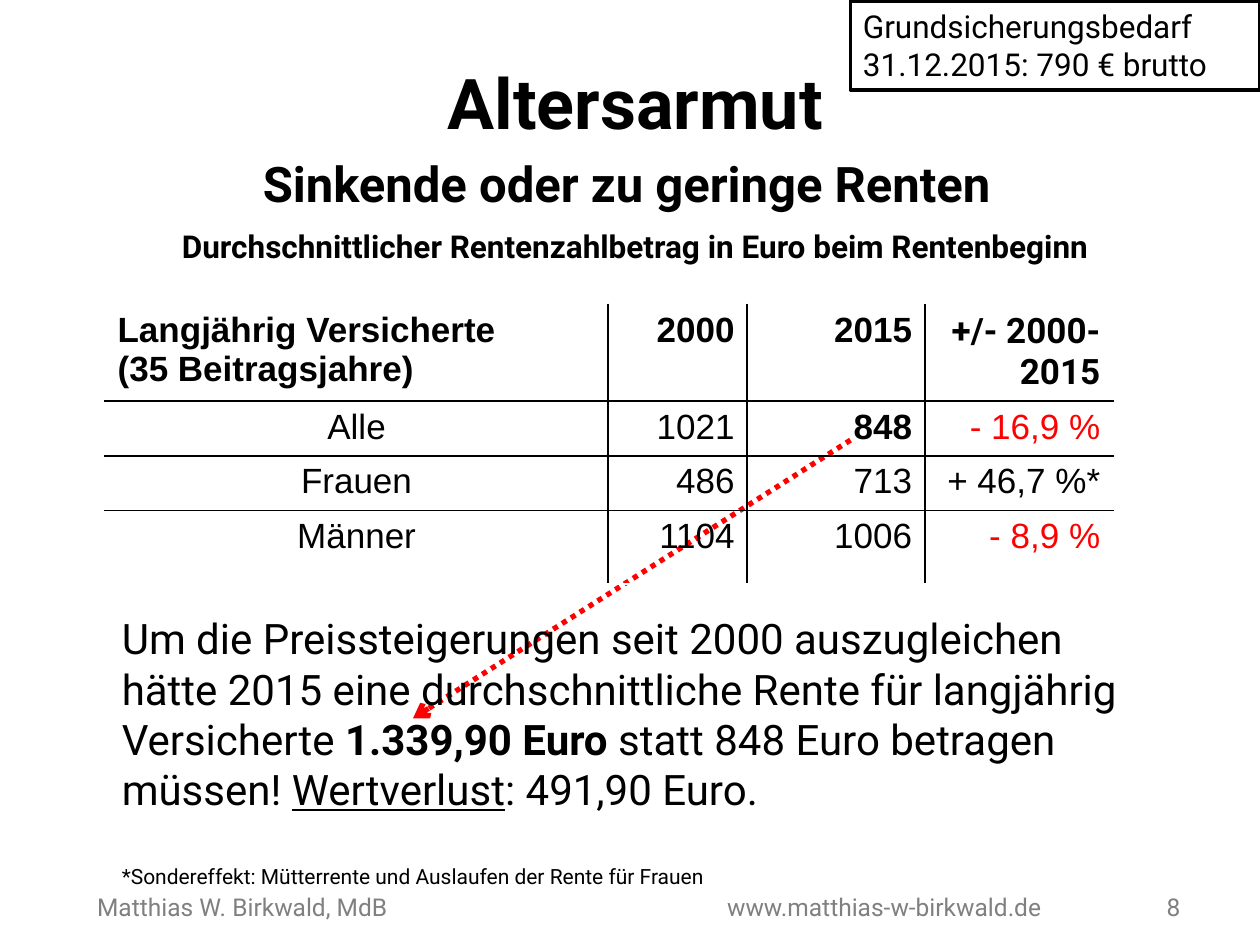
from pptx import Presentation
from pptx import util as u
from pptx.dml.color import RGBColor
from pptx.enum import dml, shapes, text
from pptx.oxml import parse_xml
from pptx.oxml.ns import nsdecls

Pt = u.Pt
BLACK = RGBColor(0, 0, 0)
WHITE = RGBColor(255, 255, 255)
RED = RGBColor(255, 0, 0)
GREY = RGBColor(128, 128, 128)
LEFT, CENTER, RIGHT = text.PP_ALIGN.LEFT, text.PP_ALIGN.CENTER, text.PP_ALIGN.RIGHT

HEADINGS = [
    ("Altersarmut", (54, 46, 618, 51), 40, 0),
    ("Sinkende oder zu geringe Renten ", (55.5, 84, 612, 41), 28, 3.6),
    ("Durchschnittlicher Rentenzahlbetrag in Euro beim Rentenbeginn", (36, 126, 654, 29), 18, 3.6),
]
NEED = "Grundsicherungsbedarf 31.12.2015: 790 € brutto"
PENSIONS = [
    ("Langjährig Versicherte \v(35 Beitragsjahre)", "2000", "2015", "+/- 2000-2015"),
    ("Alle", "1021", "848", "- 16,9 %"),
    ("Frauen", "486", "713", "+ 46,7 %*"),
    ("Männer", "1104", "1006", "- 8,9 %"),
]
COLUMN_WIDTHS = (287.5, 79.5, 101.5, 107.5)
ROW_HEIGHTS = (52, 30.5, 30.5, 42)
CONCLUSION = [
    ("Um die Preissteigerungen seit 2000 auszugleichen hätte 2015 eine "
     "durchschnittliche Rente für langjährig Versicherte ", {}),
    ("1.339,90 Euro ", {"bold": True}),
    ("statt 848 Euro betragen müssen! ", {}),
    ("Wertverlust", {"underline": True}),
    (": 491,90 Euro.", {}),
]
FOOTNOTE = "*Sondereffekt: Mütterrente und Auslaufen der Rente für Frauen"
FOOTERS = [
    ("Matthias W. Birkwald, MdB\twww.matthias-w-birkwald.de", (55.5, 499.5, 593, 37.5), LEFT),
    ("8", (507, 499.5, 167.5, 37.5), RIGHT),
]


def format_run(run, size, color=BLACK, name="Roboto", **extra):
    run.font.color.rgb = color
    for key, value in {"size": Pt(size), "name": name, **extra}.items():
        setattr(run.font, key, value)


def add_text(paragraph, words, size, **extra):
    run = paragraph.add_run()
    run.text = words
    format_run(run, size, **extra)


def text_frame(slide, box, margin_x=7.2, margin_y=3.6, anchor=text.MSO_ANCHOR.TOP):
    frame = slide.shapes.add_textbox(*map(Pt, box)).text_frame
    layout = {"word_wrap": True, "vertical_anchor": anchor,
              "margin_left": Pt(margin_x), "margin_right": Pt(margin_x),
              "margin_top": Pt(margin_y), "margin_bottom": Pt(margin_y)}
    for key, value in layout.items():
        setattr(frame, key, value)
    return frame


def add_arrow(slide):
    arrow = slide.shapes.add_connector(
        shapes.MSO_CONNECTOR.STRAIGHT, Pt(486), Pt(251.5), Pt(236), Pt(410.5))
    arrow.line.color.rgb = RED
    arrow.line.width = Pt(3)
    arrow.line.dash_style = dml.MSO_LINE.ROUND_DOT
    arrow.line._get_or_add_ln().append(parse_xml(f'<a:tailEnd type="arrow" {nsdecls("a")}/>'))
    arrow._element.spPr.append(parse_xml(f'<a:effectLst {nsdecls("a")}/>'))


def set_borders(cell, row, column):
    outer = {"L": column == 0, "R": column == len(COLUMN_WIDTHS) - 1,
             "T": row == 0, "B": row == len(PENSIONS) - 1}
    properties = cell._tc.get_or_add_tcPr()
    for position, (side, is_outer) in enumerate(outer.items()):
        color = WHITE if is_outer else BLACK
        properties.insert(position, parse_xml(
            f'<a:ln{side} w="12700" {nsdecls("a")}><a:solidFill>'
            f'<a:srgbClr val="{color}"/></a:solidFill></a:ln{side}>'))


def add_pensions(slide):
    table = slide.shapes.add_table(
        len(PENSIONS), len(COLUMN_WIDTHS), Pt(60), Pt(174),
        Pt(sum(COLUMN_WIDTHS)), Pt(sum(ROW_HEIGHTS))).table
    table.first_row = table.horz_banding = False
    for column, width in zip(table.columns, COLUMN_WIDTHS):
        column.width = Pt(width)
    for row, height in zip(table.rows, ROW_HEIGHTS):
        row.height = Pt(height)
    for r, values in enumerate(PENSIONS):
        for c, value in enumerate(values):
            cell = table.cell(r, c)
            cell.fill.background()
            set_borders(cell, r, c)
            paragraph = cell.text_frame.paragraphs[0]
            paragraph.text = value
            paragraph.alignment = RIGHT if c else CENTER if r else LEFT
            for run in paragraph.runs:
                format_run(run, 20, RED if value.startswith("- ") else BLACK,
                           "Roboto" if (r, c) == (0, 3) else "Arial",
                           bold=r == 0 or value == "848")


def add_need(slide):
    need = slide.shapes.add_shape(
        shapes.MSO_SHAPE.RECTANGLE, Pt(486), Pt(0.5), Pt(234), Pt(51))
    need.shadow.inherit = False
    need.fill.solid()
    need.fill.fore_color.rgb = WHITE
    need.line.color.rgb = BLACK
    need.line.width = Pt(2)
    need.text_frame.vertical_anchor = text.MSO_ANCHOR.TOP
    paragraph = need.text_frame.paragraphs[0]
    paragraph.alignment = LEFT
    add_text(paragraph, NEED, 18)


def add_conclusion(slide):
    frame = text_frame(slide, (62.5, 346.5, 600, 167))
    for words, extra in CONCLUSION:
        add_text(frame.paragraphs[0], words, 24, **extra)
    footnote = frame.add_paragraph()
    footnote.space_before = Pt(28)
    add_text(footnote, FOOTNOTE, 12)


def main():
    deck = Presentation()
    deck.slide_width, deck.slide_height = Pt(720), Pt(540)
    slide = deck.slides.add_slide(deck.slide_layouts[6])
    add_arrow(slide)
    for words, box, size, margin in HEADINGS:
        heading = text_frame(slide, box, 2 * margin, margin).paragraphs[0]
        heading.alignment = CENTER
        if size == 40:
            heading.line_spacing = Pt(36)
        add_text(heading, words, size, bold=True)
    for words, box, alignment in FOOTERS:
        footer = text_frame(slide, box, 0, 0, text.MSO_ANCHOR.MIDDLE).paragraphs[0]
        footer.alignment = alignment
        if "\t" in words:
            footer._p.get_or_add_pPr().append(parse_xml(
                f'<a:tabLst {nsdecls("a")}><a:tab pos="{Pt(360)}" algn="l"/></a:tabLst>'))
        add_text(footer, words, 14, color=GREY)
    add_pensions(slide)
    add_need(slide)
    add_conclusion(slide)
    deck.save("out.pptx")


if __name__ == "__main__":
    main()
